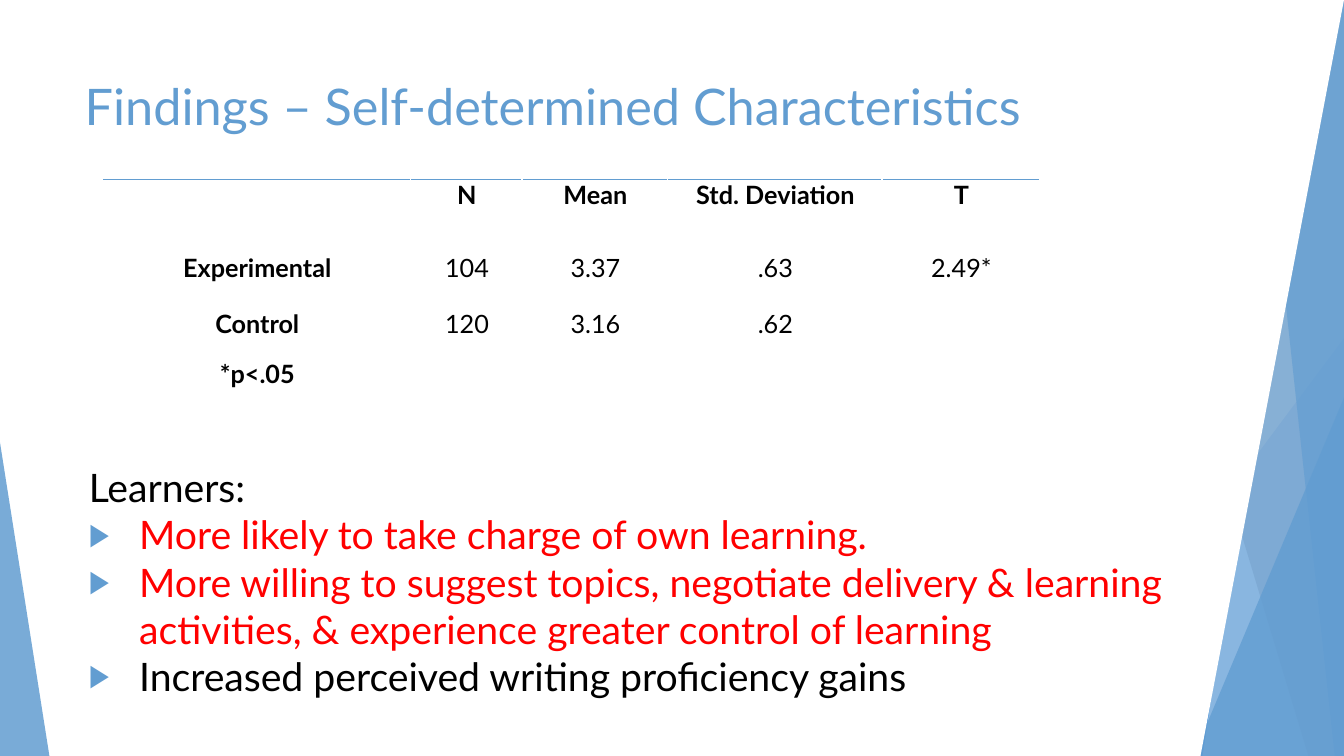
"""Builds a findings slide with a results table, a list of conclusions and faceted side decoration."""
from lxml import etree
from pptx import Presentation
from pptx.dml.color import RGBColor
from pptx.enum.shapes import MSO_SHAPE
from pptx.enum.text import MSO_ANCHOR, MSO_AUTO_SIZE, PP_ALIGN
from pptx.oxml.ns import qn
from pptx.util import Pt

TRIANGLE = MSO_SHAPE.ISOSCELES_TRIANGLE
TOP, MIDDLE = MSO_ANCHOR.TOP, MSO_ANCHOR.MIDDLE
LEFT, CENTER = PP_ALIGN.LEFT, PP_ALIGN.CENTER
FIT_SHAPE, NO_FIT = MSO_AUTO_SIZE.SHAPE_TO_FIT_TEXT, MSO_AUTO_SIZE.NONE

WIDTH, HEIGHT = 960, 540
BLUE, BLACK, RED, WHITE = "629DD1", "000000", "FF0000", "FFFFFF"

FACETS = [
    ([(895.7, 0), (WIDTH, 0), (WIDTH, HEIGHT), (758.2, HEIGHT)], BLUE, 30),
    ([(775.4, 0), (WIDTH, 0), (WIDTH, HEIGHT), (861.8, HEIGHT)], BLUE, 20),
    ((737.3, 239.8, 223.9, 300.2, 1), "297FD5", 72),
    ([(771.8, 0), (WIDTH, 0), (WIDTH, HEIGHT), (934.6, HEIGHT)], "1F5FA0", 70),
    ([(939.6, 0), (WIDTH, 0), (WIDTH, HEIGHT), (859, HEIGHT)], "A1C4E3", 70),
    ([(895, 0), (WIDTH, 0), (WIDTH, HEIGHT), (953.3, HEIGHT)], BLUE, 65),
    ((852.5, 283, 108, 257, 1), BLUE, 80),
    ((0, 316.1, 35.3, 223.9, 0), BLUE, 85),
    ([(627.8, 0), (WIDTH, 0), (857.5, HEIGHT), (627.8, HEIGHT)], WHITE, 100),
]

RESULTS = [
    ["", "N", "Mean", "Std. Deviation", "T"],
    ["Experimental", "104", "3.37", ".63", "2.49*"],
    ["Control", "120", "3.16", ".62", ""],
    ["*p<.05", "", "", "", ""],
]
COLUMN_WIDTHS = [219.6, 79.9, 103.7, 153.4, 112.3]
ROW_HEIGHTS = [34.6, 57.6, 36, 24.5]
ROW_BORDERS = {
    0: {"L": WHITE, "R": WHITE, "T": BLUE, "B": BLUE},
    2: {"L": WHITE, "R": WHITE, "T": WHITE, "B": BLUE},
}

CONCLUSIONS = [
    ("Learners:", BLACK, False),
    ("More likely to take charge of own learning.", RED, True),
    ("More willing to suggest topics, negotiate delivery & learning activities, "
     "& experience greater control of learning", RED, True),
    ("Increased perceived writing proficiency gains", BLACK, True),
]


def rgb(hex_color):
    return RGBColor.from_string(hex_color)


def add_xml(parent, tag, **attributes):
    return etree.SubElement(parent, qn(tag), attributes)


class FindingsSlide:
    font = "Lato"

    def __init__(self, presentation):
        self.slide = presentation.slides.add_slide(presentation.slide_layouts[1])
        self.shapes = self.slide.shapes

    def format_runs(self, paragraph, size, color, bold=False):
        for run in paragraph.runs:
            run.font.name = self.font
            run.font.size = Pt(size)
            run.font.bold = bold
            run.font.color.rgb = rgb(color)

    def set_indent(self, paragraph, margin, first_line):
        properties = paragraph._p.get_or_add_pPr()
        properties.set("marL", str(Pt(margin)))
        properties.set("indent", str(Pt(first_line)))
        return properties

    def place(self, placeholder, left, top, width, height):
        placeholder.left, placeholder.top = Pt(left), Pt(top)
        placeholder.width, placeholder.height = Pt(width), Pt(height)
        self.shapes._spTree.append(placeholder._element)

    def facet(self, outline, color, opacity):
        if isinstance(outline, tuple):
            *box, apex = outline
            facet = self.shapes.add_shape(TRIANGLE, *map(Pt, box))
            facet.adjustments[0] = apex
        else:
            corners = [(Pt(x), Pt(y)) for x, y in outline]
            builder = self.shapes.build_freeform(*corners[0])
            builder.add_line_segments(corners[1:])
            facet = builder.convert_to_shape()
        facet.shadow.inherit = False
        facet.line.fill.background()
        facet.fill.solid()
        facet.fill.fore_color.rgb = rgb(color)
        if opacity < 100:
            fill_color = facet._element.spPr.find(qn("a:solidFill"))[0]
            add_xml(fill_color, "a:alpha", val=str(opacity * 1000))

    def title(self, text, *box):
        title = self.shapes.title
        self.place(title, *box)
        frame = title.text_frame
        frame.text = text
        frame.auto_size = NO_FIT
        frame.vertical_anchor = MIDDLE
        heading = frame.paragraphs[0]
        heading.alignment = LEFT
        self.format_runs(heading, 36, BLUE)

    def bullets(self, items, *box):
        body = self.slide.placeholders[1]
        self.place(body, *box)
        frame = body.text_frame
        frame.text = "\n".join(text for text, _, _ in items)
        frame.auto_size = FIT_SHAPE
        frame.vertical_anchor = TOP
        for paragraph, (_, color, bulleted) in zip(frame.paragraphs, items):
            paragraph.level = 1
            paragraph.alignment = LEFT
            paragraph.space_before = Pt(0)
            self.format_runs(paragraph, 28, color)
            if bulleted:
                properties = self.set_indent(paragraph, 72, -36)
                bullet_color = add_xml(properties, "a:buClr")
                add_xml(bullet_color, "a:srgbClr", val=BLUE)
                add_xml(properties, "a:buSzPct", val="80000")
                add_xml(properties, "a:buChar", char="▶")
            else:
                add_xml(self.set_indent(paragraph, 36, 0), "a:buNone")

    def borders(self, cell, colors):
        properties = cell._tc.get_or_add_tcPr()
        for side, color in colors.items():
            line = add_xml(properties, f"a:ln{side}", w=str(Pt(1)))
            add_xml(add_xml(line, "a:solidFill"), "a:srgbClr", val=color)

    def table(self, rows, left, top):
        frame = self.shapes.add_table(
            len(rows), len(rows[0]), Pt(left), Pt(top),
            Pt(sum(COLUMN_WIDTHS)), Pt(sum(ROW_HEIGHTS)))
        table = frame.table
        table.first_row = table.horz_banding = False
        for column, width in zip(table.columns, COLUMN_WIDTHS):
            column.width = Pt(width)
        for r, (row, height) in enumerate(zip(rows, ROW_HEIGHTS)):
            table.rows[r].height = Pt(height)
            for c, text in enumerate(row):
                cell = table.cell(r, c)
                self.borders(cell, ROW_BORDERS.get(r, {}))
                cell.fill.background()
                cell.margin_left = cell.margin_right = Pt(5)
                cell.margin_top = cell.margin_bottom = 0
                cell.vertical_anchor = MIDDLE if r == 1 else TOP
                cell.text = text
                paragraph = cell.text_frame.paragraphs[0]
                paragraph.alignment = CENTER
                paragraph.space_before = Pt(2)
                self.set_indent(paragraph, 1.2, 0)
                self.format_runs(paragraph, 18, BLACK, bold=r == 0 or c == 0)


def main():
    presentation = Presentation()
    presentation.slide_width, presentation.slide_height = Pt(WIDTH), Pt(HEIGHT)
    findings = FindingsSlide(presentation)
    for outline, color, opacity in FACETS:
        findings.facet(outline, color, opacity)
    findings.title("Findings – Self-determined Characteristics", 53.3, 48.2, 769.7, 54.7)
    findings.bullets(CONCLUSIONS, 20.2, 327.6, 839.5, 177.1)
    findings.table(RESULTS, 73.4, 128.2)
    presentation.save("out.pptx")


if __name__ == "__main__":
    main()
